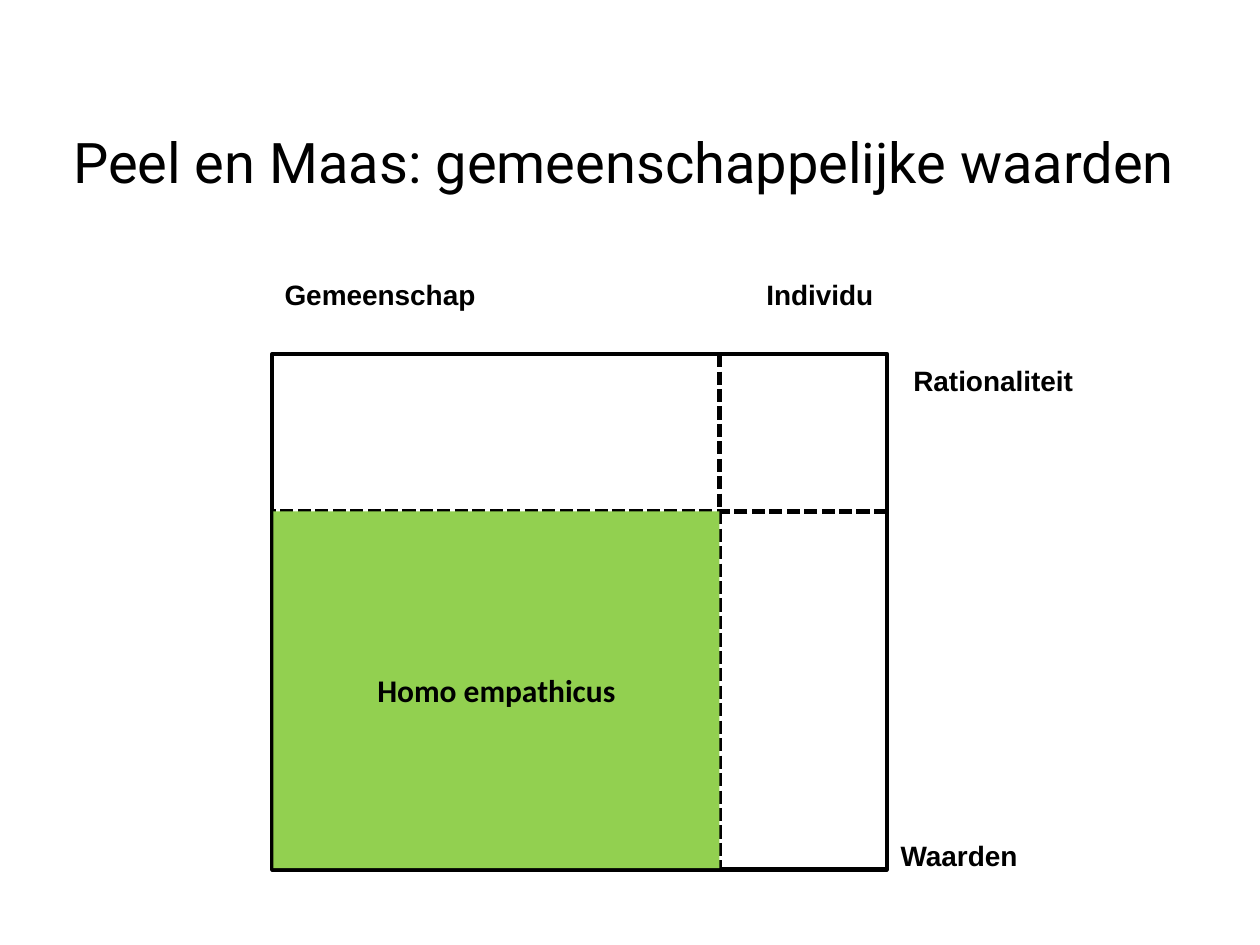
from dataclasses import dataclass

import pptx
import pptx.dml.color
import pptx.enum.dml
import pptx.enum.shapes
import pptx.enum.text
import pptx.oxml.ns
import pptx.util
from lxml import etree

Inches = pptx.util.Inches
Pt = pptx.util.Pt
ALIGN = pptx.enum.text.PP_ALIGN
MIDDLE = pptx.enum.text.MSO_ANCHOR.MIDDLE

BLACK = pptx.dml.color.RGBColor(0x00, 0x00, 0x00)
GREEN = pptx.dml.color.RGBColor(0x92, 0xD0, 0x50)

# Matrix edges and the lines that divide it
LEFT, RIGHT, TOP, BOTTOM = 2.16, 7.04, 2.81, 6.9
SPLIT_X, SPLIT_Y = 5.71, 4.06
BORDER = Pt(2.5)


@dataclass
class AxisLabel:
    text: str
    left: float
    top: float
    width: float
    align: ALIGN = ALIGN.LEFT


@dataclass
class Divider:
    start: tuple[float, float]
    end: tuple[float, float]


AXIS_LABELS = [
    AxisLabel("Gemeenschap", LEFT, 2.15, 1.95),
    AxisLabel("Individu", 5.98, 2.15, 1.05, ALIGN.RIGHT),
    AxisLabel("Rationaliteit", 7.15, 2.84, 2.18),
    AxisLabel("Waarden", 7.05, 6.61, 2),
]
DIVIDERS = [
    Divider((SPLIT_X, TOP), (SPLIT_X, BOTTOM)),
    Divider((RIGHT, SPLIT_Y), (LEFT, SPLIT_Y)),
]


def write(frame, text: str, font: str, size: float, bold: bool, align: ALIGN) -> None:
    frame.text = text
    frame.word_wrap = True
    paragraph = frame.paragraphs[0]
    paragraph.alignment = align
    style = paragraph.runs[0].font
    style.name, style.size, style.bold = font, Pt(size), bold
    style.color.rgb = BLACK


def add_rectangle(slide, left: float, top: float, right: float, bottom: float):
    rectangle = slide.shapes.add_shape(
        pptx.enum.shapes.MSO_SHAPE.RECTANGLE,
        Inches(left), Inches(top), Inches(right - left), Inches(bottom - top))
    rectangle.shadow.inherit = False
    return rectangle


def add_axis_label(slide, label: AxisLabel) -> None:
    box = slide.shapes.add_textbox(
        Inches(label.left), Inches(label.top), Inches(label.width), Inches(0.37))
    write(box.text_frame, label.text, "Arial", 16, True, label.align)


def add_divider(slide, divider: Divider) -> None:
    ends = [Inches(value) for value in divider.start + divider.end]
    line = slide.shapes.add_connector(pptx.enum.shapes.MSO_CONNECTOR.STRAIGHT, *ends)
    line.line.color.rgb = BLACK
    line.line.width = BORDER
    line.line.dash_style = pptx.enum.dml.MSO_LINE.SQUARE_DOT  # sysDash in the file
    # An empty effect list removes the shadow
    etree.SubElement(line._element.spPr, pptx.oxml.ns.qn("a:effectLst"))


def main() -> None:
    deck = pptx.Presentation()
    deck.slide_width, deck.slide_height = Inches(10), Inches(7.5)
    slide = deck.slides.add_slide(deck.slide_layouts[5])

    # Title
    title = slide.shapes.title
    title.left, title.top = Inches(0.48), Inches(0.84)
    title.width, title.height = Inches(9.25), Inches(0.87)
    title.text_frame.vertical_anchor = MIDDLE
    write(title.text_frame, "Peel en Maas: gemeenschappelijke waarden",
          "Roboto", 32, False, ALIGN.LEFT)

    # Matrix outline
    outline = add_rectangle(slide, LEFT, TOP, RIGHT, BOTTOM)
    outline.fill.background()
    outline.line.color.rgb = BLACK
    outline.line.width = BORDER

    # Axis labels and dividing lines
    for label in AXIS_LABELS:
        add_axis_label(slide, label)
    for divider in DIVIDERS:
        add_divider(slide, divider)

    # Highlighted quadrant
    quadrant = add_rectangle(slide, LEFT + 0.01, SPLIT_Y, SPLIT_X, BOTTOM - 0.01)
    quadrant.fill.solid()
    quadrant.fill.fore_color.rgb = GREEN
    quadrant.line.fill.background()
    quadrant.text_frame.vertical_anchor = MIDDLE
    write(quadrant.text_frame, "Homo empathicus", "Calibri", 18, True, ALIGN.CENTER)

    deck.save("out.pptx")


if __name__ == "__main__":
    main()
